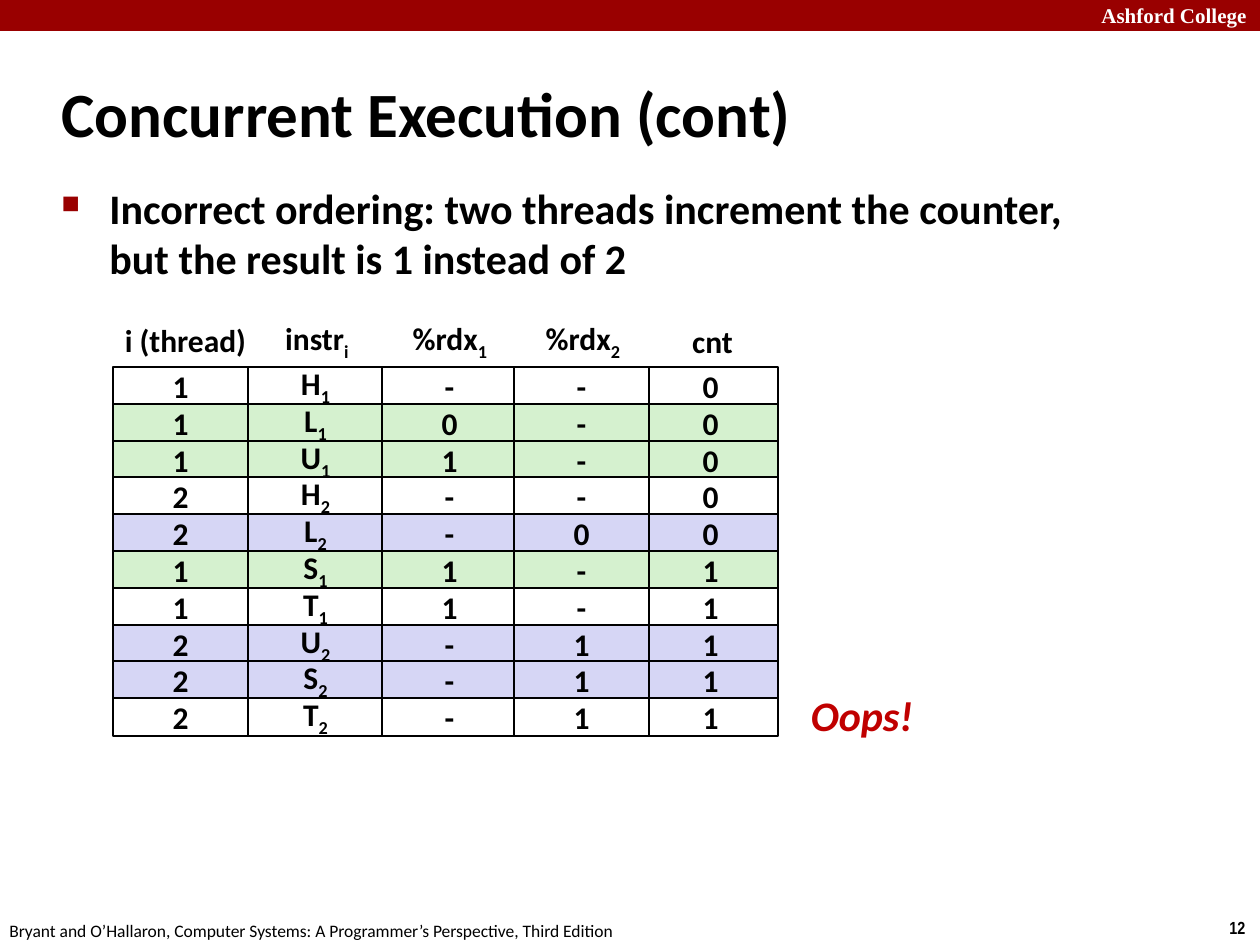
from dataclasses import dataclass

from lxml.etree import SubElement
from pptx import Presentation
from pptx.dml.color import RGBColor
from pptx.enum.shapes import MSO_SHAPE
from pptx.enum.text import MSO_ANCHOR, MSO_AUTO_SIZE, PP_ALIGN
from pptx.oxml.ns import qn
from pptx.util import Emu, Pt


@dataclass(frozen=True)
class Theme:
    """Colours, fonts and type sizes of the slide."""
    black: str = "000000"
    white: str = "FFFFFF"
    brand: str = "990000"
    alert: str = "C00000"
    green: str = "D5F1CF"
    blue: str = "D6D6F5"
    sans: str = "Calibri"
    serif: str = "Times New Roman"
    narrow: str = "Arial Narrow"
    title: int = 36
    body: int = 24
    cell: int = 18
    head: int = 12
    foot: int = 10


THEME = Theme()
SCALE = 914400 / 126
LEFTS = (113, 248, 382, 514, 643)
DRAW = (0, 1, 2, 4, 3)
WIDTH, HEIGHT = 135, 38
TOP, PITCH = 367, 36.8
HEADS = (
    (112, 315, 147, "i (thread)"),
    (272, 316, 90, "instr_i"),
    (399, 316, 102, "%rdx_1"),
    (532, 316, 102, "%rdx_2"),
    (679, 316, 67, "cnt"),
)
STEPS = (
    ("1", "H_1", "-", "-", "0"),
    ("1", "L_1", "0", "-", "0"),
    ("1", "U_1", "1", "-", "0"),
    ("2", "H_2", "-", "-", "0"),
    ("2", "L_2", "-", "0", "0"),
    ("1", "S_1", "1", "-", "1"),
    ("1", "T_1", "1", "-", "1"),
    ("2", "U_2", "-", "1", "1"),
    ("2", "S_2", "-", "1", "1"),
    ("2", "T_2", "-", "1", "1"),
)


def px(num):
    """Turn pixels into EMU."""
    return Emu(round(num * SCALE))


def tint(step):
    """Pick the fill for a step: load, update and store are coloured by thread."""
    if step[1][0] in "HT":
        return THEME.white
    return THEME.green if step[0] == "1" else THEME.blue


def write(para, text, size, color=THEME.black, face=THEME.sans, bold=True, slant=False):
    """Write text as runs; what follows an underscore is a subscript."""
    for pos, part in enumerate(text.split("_")):
        run = para.add_run()
        run.text = part
        font = run.font
        font.name, font.size = face, Pt(size)
        font.bold, font.italic = bold, slant
        font.color.rgb = RGBColor.from_string(color)
        if pos:
            font._element.set("baseline", "-25000")


def block(slide, box, fill, line=None):
    """Add a plain rectangle."""
    shape = slide.shapes.add_shape(MSO_SHAPE.RECTANGLE, *map(px, box))
    shape.shadow.inherit = False
    shape.fill.solid()
    shape.fill.fore_color.rgb = RGBColor.from_string(fill)
    if line:
        shape.line.color.rgb = RGBColor.from_string(line)
        shape.line.width = Pt(1)
    else:
        shape.line.fill.background()
    return shape


def label(slide, box, text, size, wrap=False, mid=False, **look):
    """Add a text box with one paragraph, and return the paragraph."""
    frame = slide.shapes.add_textbox(*map(px, box)).text_frame
    frame.word_wrap = wrap
    para = frame.paragraphs[0]
    if mid:
        frame.vertical_anchor = MSO_ANCHOR.MIDDLE
        para.alignment = PP_ALIGN.CENTER
    write(para, text, size, **look)
    return para


def indent(para, size):
    """Give a paragraph a hanging indent, and return its properties."""
    props = para._p.get_or_add_pPr()
    props.set("marL", str(px(size)))
    props.set("indent", str(-px(size)))
    return props


def title(slide, box, text):
    """Place and format the title."""
    shape = slide.shapes.title
    shape.left, shape.top, shape.width, shape.height = map(px, box)
    frame = shape.text_frame
    frame.auto_size = MSO_AUTO_SIZE.NONE
    frame.vertical_anchor = MSO_ANCHOR.MIDDLE
    para = frame.paragraphs[0]
    para.alignment = PP_ALIGN.LEFT
    indent(para, 16)
    write(para, text, THEME.title)


def bullet(slide, box, text):
    """Add a paragraph with a square bullet."""
    para = label(slide, box, text, THEME.body, wrap=True)
    para.space_before = Pt(5)
    props = indent(para, 48)
    color = SubElement(props, qn("a:buClr"))
    SubElement(color, qn("a:srgbClr"), val=THEME.brand)
    SubElement(props, qn("a:buSzPct"), val="60000")
    SubElement(props, qn("a:buChar"), char="■")


def cell(slide, box, text, fill):
    """Add one bordered cell of the trace."""
    frame = block(slide, box, fill, THEME.black).text_frame
    frame.vertical_anchor = MSO_ANCHOR.MIDDLE
    para = frame.paragraphs[0]
    para.alignment = PP_ALIGN.CENTER
    write(para, text, THEME.cell)


def trace(slide):
    """Add the grid of steps and its headings."""
    for col in DRAW:
        for row, step in enumerate(STEPS):
            box = LEFTS[col], TOP + round(row * PITCH), WIDTH, HEIGHT
            cell(slide, box, step[col], tint(step))
    for left, top, width, text in HEADS:
        label(slide, (left, top, width, 50), text, THEME.cell, mid=True)


def frame(slide):
    """Add the top band, the footer and the page number."""
    block(slide, (0, 0, 1260, 31), THEME.brand)
    label(slide, (1089, -4, 180, 38), "Ashford College", THEME.head,
          wrap=True, color=THEME.white, face=THEME.serif)
    label(slide, (1217, 911, 43, 34), "12", THEME.foot, face=THEME.narrow)
    label(slide, (-3, 914, 640, 34),
          "Bryant and O’Hallaron, Computer Systems: A Programmer’s Perspective, Third Edition",
          THEME.foot, bold=False)


def main():
    """Build the slide and save it."""
    deck = Presentation()
    deck.slide_width, deck.slide_height = px(1260), px(945)
    slide = deck.slides.add_slide(deck.slide_layouts[5])
    frame(slide)
    title(slide, (49, 60, 1046, 105), "Concurrent Execution (cont)")
    bullet(slide, (49, 176, 1088, 118),
           "Incorrect ordering: two threads increment the counter, but the result is 1 instead of 2")
    trace(slide)
    label(slide, (798, 683, 128, 63), "Oops!", THEME.body, mid=True,
          color=THEME.alert, slant=True)
    deck.save("out.pptx")


if __name__ == "__main__":
    main()
